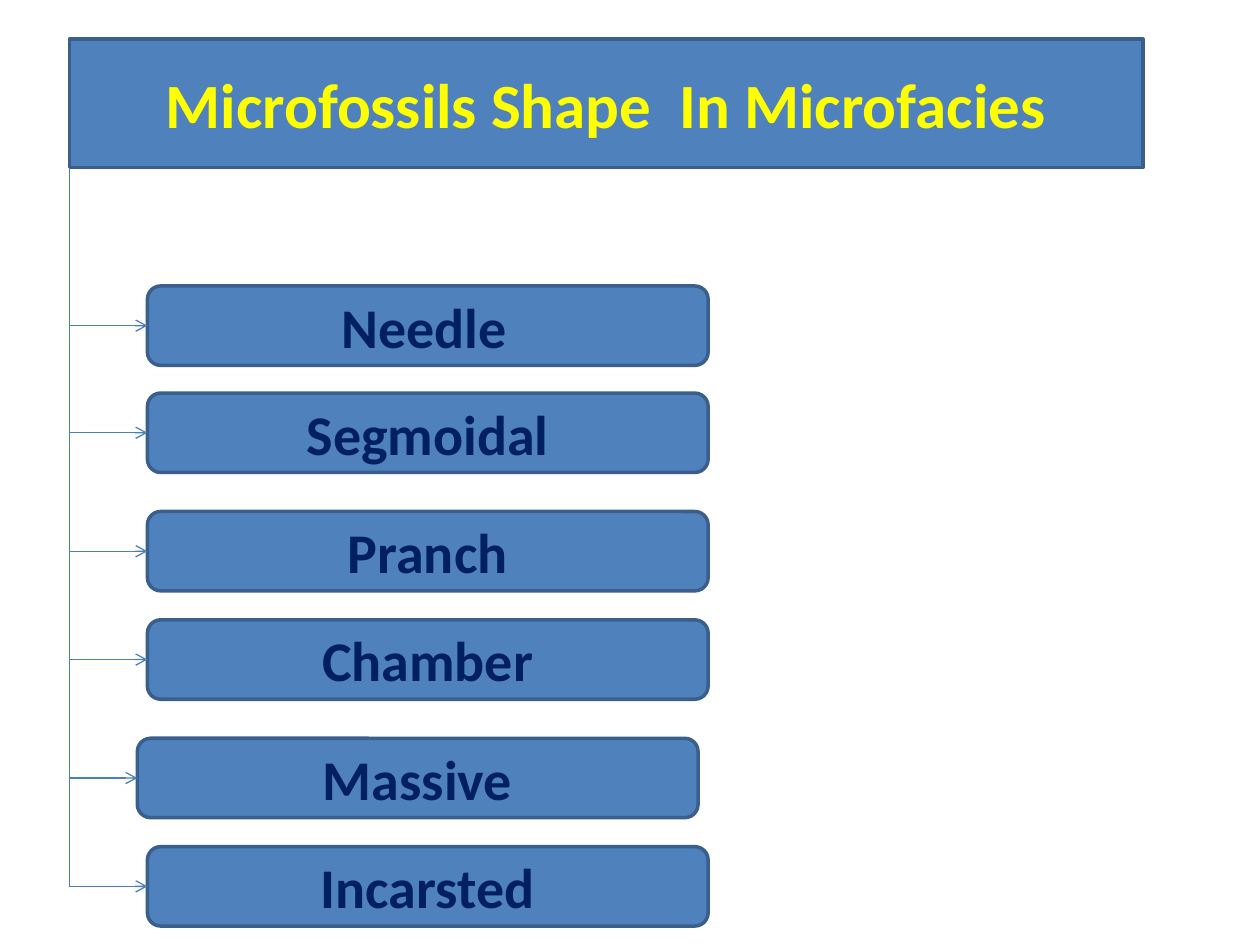
from dataclasses import dataclass

from lxml import etree
from pptx import Presentation
from pptx.dml.color import RGBColor
from pptx.enum import shapes, text
from pptx.oxml import ns
from pptx.util import Inches, Pt


@dataclass(frozen=True)
class Theme:
    font: str = "Calibri"
    fill: str = "4F81BD"
    border: str = "3A5F8C"
    arrow: str = "4B7EBC"
    title: str = "FFFF00"
    label: str = "002060"
    title_size: int = 36
    label_size: int = 32
    space_size: int = 18
    border_width: float = 2
    arrow_width: float = 0.75


THEME = Theme()
TITLE = "Microfossils Shape  In Microfacies"
TITLE_AREA = (0.55, 0.31, 8.52, 1.02)

# Label, box left, box top
SHAPE_TYPES = [
    ("Needle ", 1.17, 2.27),
    ("Segmoidal", 1.17, 3.12),
    ("Pranch", 1.17, 4.06),
    ("Chamber", 1.17, 4.92),
    ("Massive", 1.09, 5.86),
    ("Incarsted", 1.17, 6.72),
]
BOX_WIDTH, BOX_HEIGHT = 4.45, 0.63


def add_box(page, content, *, kind, area, size, color):
    box = page.shapes.add_shape(kind, *map(Inches, area))
    box.shadow.inherit = False
    box.fill.solid()
    box.fill.fore_color.rgb = RGBColor.from_string(THEME.fill)
    box.line.color.rgb = RGBColor.from_string(THEME.border)
    box.line.width = Pt(THEME.border_width)
    frame = box.text_frame
    frame.word_wrap = True
    frame.vertical_anchor = text.MSO_ANCHOR.MIDDLE
    para = frame.paragraphs[0]
    para.alignment = text.PP_ALIGN.CENTER
    label = content.rstrip()
    pieces = [(label, size), (content[len(label):], THEME.space_size)]
    for words, points in pieces:
        if words:
            span = para.add_run()
            span.text = words
            span.font.name = THEME.font
            span.font.size = Pt(points)
            span.font.bold = True
            span.font.color.rgb = RGBColor.from_string(color)
    return box


def add_line(page, start, end, *, arrow=False):
    line = page.shapes.add_connector(
        shapes.MSO_CONNECTOR.STRAIGHT, *map(Inches, (*start, *end)))
    line.line.color.rgb = RGBColor.from_string(THEME.arrow)
    line.line.width = Pt(THEME.arrow_width)
    if arrow:
        etree.SubElement(line.line._get_or_add_ln(), ns.qn("a:tailEnd"), type="arrow")
    etree.SubElement(line._element.spPr, ns.qn("a:effectLst"))
    return line


def main():
    deck = Presentation()
    deck.slide_width, deck.slide_height = Inches(10), Inches(7.5)
    page = deck.slides.add_slide(deck.slide_layouts[6])

    # Title and the spine from its left corner to the middle of the last box
    add_box(page, TITLE, kind=shapes.MSO_SHAPE.RECTANGLE, area=TITLE_AREA,
            size=THEME.title_size, color=THEME.title)
    spine, title_top, _, title_height = TITLE_AREA
    last_top = SHAPE_TYPES[-1][2]
    add_line(page, (spine, title_top + title_height),
             (spine, last_top + BOX_HEIGHT / 2))

    # One box for each shape type, with a level arrow from the spine
    for label, left, top in SHAPE_TYPES:
        box = add_box(page, label, kind=shapes.MSO_SHAPE.ROUNDED_RECTANGLE,
                      area=(left, top, BOX_WIDTH, BOX_HEIGHT),
                      size=THEME.label_size, color=THEME.label)
        middle = top + BOX_HEIGHT / 2
        arrow = add_line(page, (spine, middle), (left, middle), arrow=True)
        arrow.end_connect(box, 1)

    deck.save("out.pptx")


if __name__ == "__main__":
    main()
